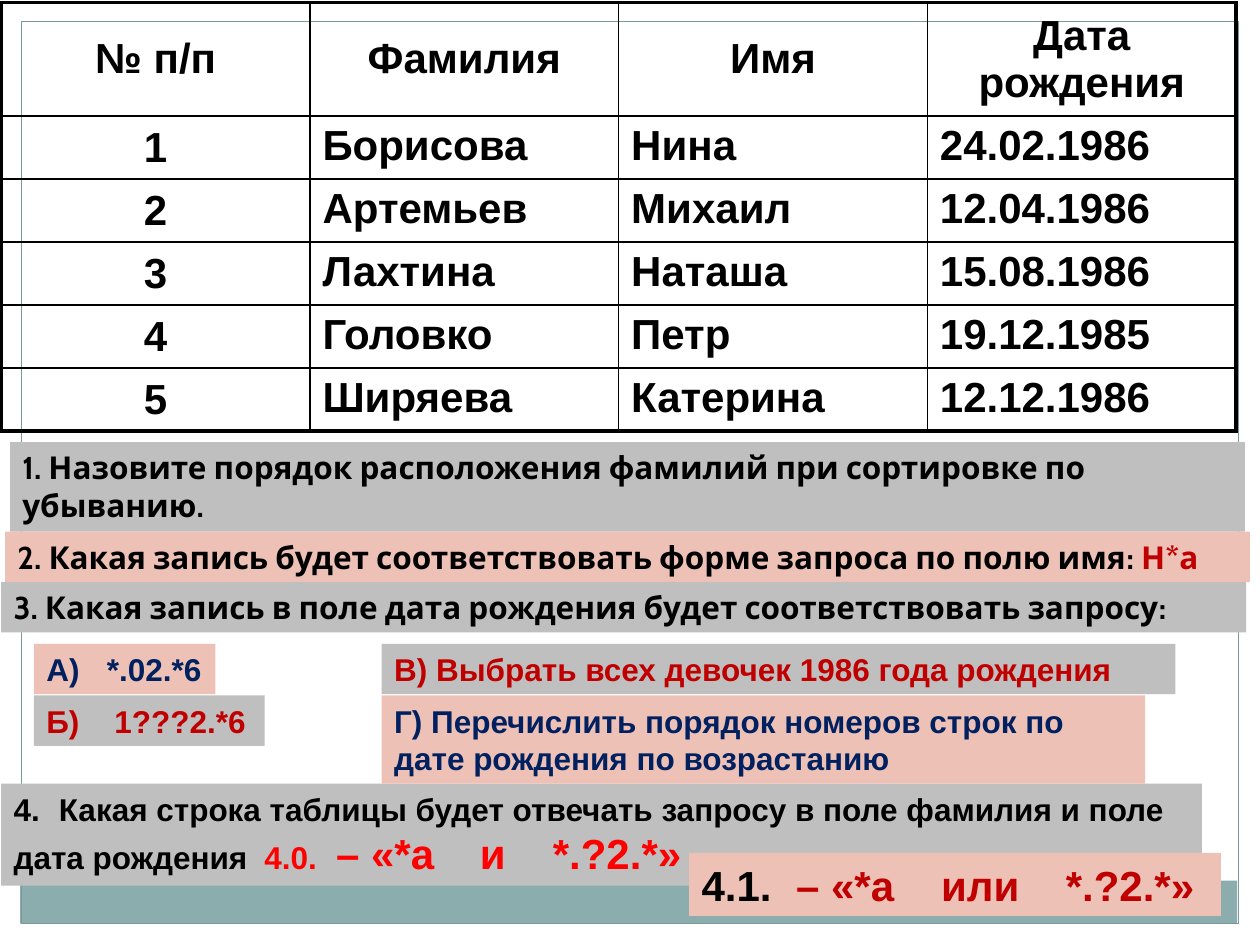
from lxml.etree import SubElement
from pptx import Presentation
from pptx.dml.color import RGBColor
from pptx.enum.shapes import MSO_SHAPE as Shape
from pptx.enum.text import MSO_ANCHOR as Anchor, MSO_AUTO_SIZE as AutoSize, PP_ALIGN as Align
from pptx.oxml.ns import qn
from pptx.util import Inches, Pt

BLACK, RED, DARK_RED, NAVY = "000000", "FF0000", "C00000", "002060"
GRAY, PINK, TEAL, FRAME = "BFBFBF", "EDC1B6", "8CADAE", "7C999A"

STUDENTS = [
    ("№ п/п", "Фамилия", "Имя", "Дата рождения"),
    ("1", "Борисова", "Нина", "24.02.1986"),
    ("2", "Артемьев", "Михаил", "12.04.1986"),
    ("3", "Лахтина", "Наташа", "15.08.1986"),
    ("4", "Головко", "Петр", "19.12.1985"),
    ("5", "Ширяева", "Катерина", "12.12.1986"),
]


def color(hex_code):
    return RGBColor.from_string(hex_code)


def add_text(paragraph, text, size=18, font="Arial", ink=BLACK):
    run = paragraph.add_run()
    run.text = text
    run.font.size = Pt(size)
    run.font.name = font
    run.font.bold = True
    run.font.color.rgb = color(ink)


def set_tabs(paragraph, stops):
    tab_list = SubElement(paragraph._p.get_or_add_pPr(), qn("a:tabLst"))
    for stop in stops:
        SubElement(tab_list, qn("a:tab"), pos=str(Inches(stop)), algn="l")


def add_panel(slide, box, fill=None, line=None):
    panel = slide.shapes.add_shape(Shape.RECTANGLE, *map(Inches, box))
    panel.shadow.inherit = False
    if fill:
        panel.fill.solid()
        panel.fill.fore_color.rgb = color(fill)
    else:
        panel.fill.background()
    if line:
        panel.line.color.rgb = color(line)
        panel.line.width = Pt(0.75)
    else:
        panel.line.fill.background()


def add_question(slide, box, fill, parts, tabs=(), wrap=True):
    question = slide.shapes.add_textbox(*map(Inches, box))
    question.fill.solid()
    question.fill.fore_color.rgb = color(fill)
    frame = question.text_frame
    frame.word_wrap = wrap
    frame.auto_size = AutoSize.SHAPE_TO_FIT_TEXT
    paragraph = frame.paragraphs[0]
    if tabs:
        set_tabs(paragraph, tabs)
    for text, style in parts:
        add_text(paragraph, text, **style)


def set_borders(cell, widths):
    properties = cell._tc.get_or_add_tcPr()
    for side, width in widths.items():
        border = SubElement(properties, qn(f"a:ln{side}"), w=str(Pt(width)))
        fill = SubElement(border, qn("a:solidFill"))
        SubElement(fill, qn("a:srgbClr"), val=BLACK)


def add_student_table(slide):
    last_row, last_column = len(STUDENTS) - 1, len(STUDENTS[0]) - 1
    table = slide.shapes.add_table(
        last_row + 1, last_column + 1,
        Inches(0.01), Inches(0.02), Inches(9.8), Inches(3.4)).table
    table.first_row = table.horz_banding = False
    for row_index, student in enumerate(STUDENTS):
        table.rows[row_index].height = Inches(0.5 if row_index else 0.9)
        for column_index, text in enumerate(student):
            cell = table.cell(row_index, column_index)
            outer = {"L": column_index == 0, "R": column_index == last_column,
                     "T": row_index == 0, "B": row_index == last_row}
            set_borders(cell, {side: 2.25 if edge else 1 for side, edge in outer.items()})
            cell.fill.background()
            paragraph = cell.text_frame.paragraphs[0]
            if row_index == 0 or column_index == 0:
                cell.vertical_anchor = Anchor.MIDDLE
                paragraph.alignment = Align.CENTER
            add_text(paragraph, text, size=24)


def main():
    deck = Presentation()
    deck.slide_width, deck.slide_height = Inches(10), Inches(7.5)
    slide = deck.slides.add_slide(deck.slide_layouts[6])

    add_panel(slide, (0.16, 6.99, 9.66, 0.34), fill=TEAL)
    add_panel(slide, (0.17, 0.17, 9.66, 7.16), line=FRAME)
    add_student_table(slide)

    cabin = {"font": "Cabin"}
    add_question(slide, (0.08, 3.51, 9.8, 0.71), GRAY, [
        ("1. Назовите порядок расположения фамилий при сортировке по убыванию.", cabin)])
    add_question(slide, (0.04, 4.22, 9.88, 0.4), PINK, [
        ("2. Какая запись будет соответствовать форме запроса по полю имя: ", cabin),
        ("Н*а", {"font": "Cabin", "ink": DARK_RED})])
    add_question(slide, (0.01, 4.62, 9.88, 0.4), GRAY, [
        ("3. Какая запись в поле дата рождения будет соответствовать запросу:", cabin)])
    add_question(slide, (0.01, 6.22, 9.53, 0.81), GRAY, [
        ("4.\tКакая строка таблицы будет отвечать запросу в поле фамилия и поле "
         "дата рождения\t", {}),
        ("4.0.\t", {"ink": RED}),
        ("– «*а\tи\t*.?2.*»", {"size": 24, "ink": RED})],
        tabs=(0.36, 1.99, 2.56, 3.7, 4.28))
    add_question(slide, (3.03, 5.11, 6.3, 0.4), GRAY, [
        ("В) Выбрать всех девочек 1986 года рождения", {"ink": DARK_RED})])
    add_question(slide, (0.27, 5.52, 1.83, 0.4), GRAY, [
        ("Б)\t1???2.*6", {"ink": DARK_RED})], tabs=(0.54,), wrap=False)
    add_question(slide, (0.27, 5.11, 1.44, 0.4), PINK, [
        ("А)\t*.02.*6", {"ink": NAVY})], tabs=(0.48,), wrap=False)
    add_question(slide, (3.03, 5.52, 6.06, 0.7), PINK, [
        ("Г) Перечислить порядок номеров строк по дате рождения по возрастанию",
         {"ink": NAVY})])
    add_question(slide, (5.47, 6.77, 4.22, 0.5), PINK, [
        ("4.1.", {"size": 24}),
        ("\t– «*а\tили\t*.?2.*»", {"size": 24, "ink": DARK_RED})],
        tabs=(0.75, 1.9, 2.89))

    deck.save("out.pptx")


if __name__ == "__main__":
    main()
